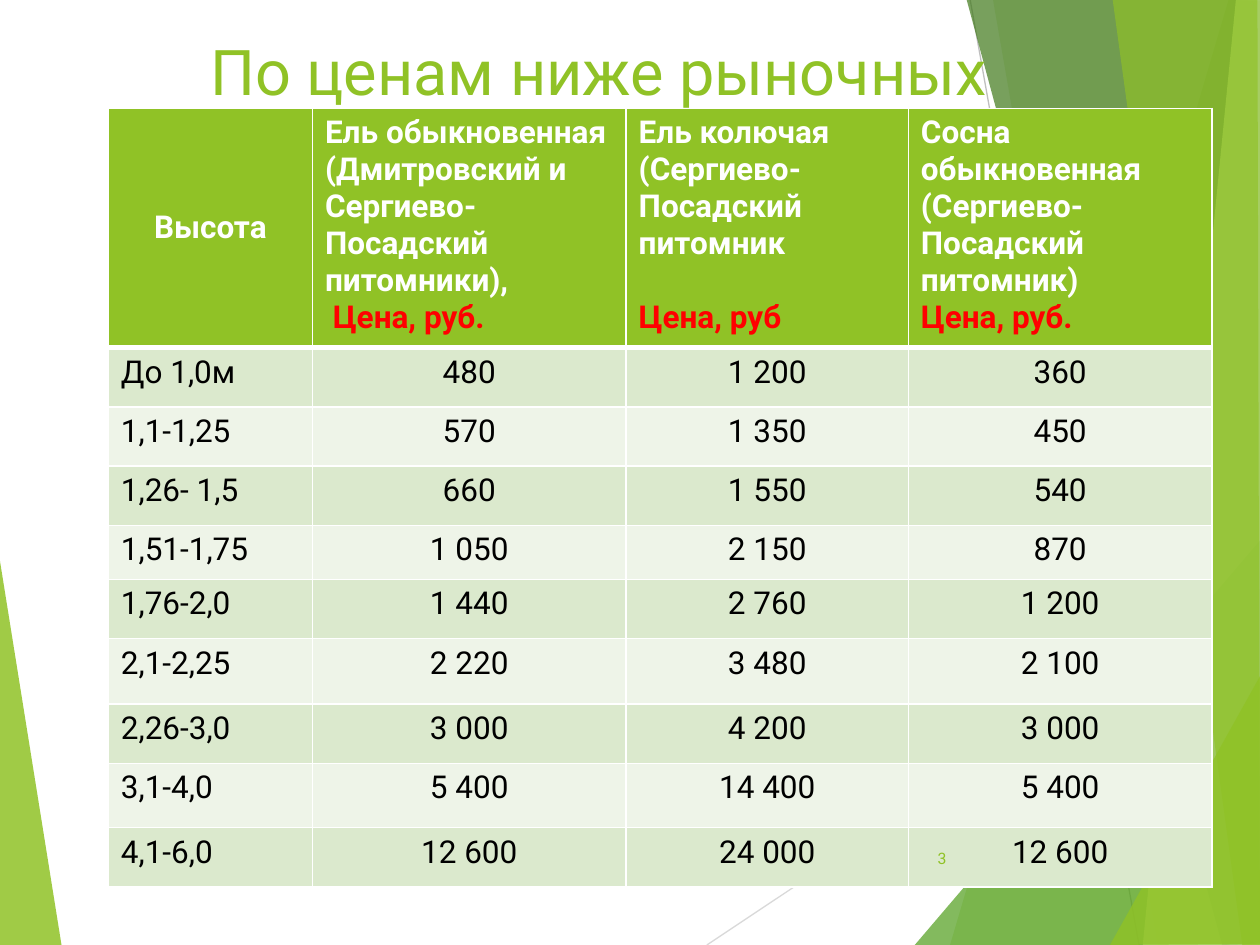
from dataclasses import dataclass

from lxml import etree
from pptx import Presentation
from pptx.dml.color import RGBColor
from pptx.enum.shapes import MSO_CONNECTOR
from pptx.enum.text import MSO_ANCHOR, PP_ALIGN
from pptx.oxml.ns import qn
from pptx.util import Inches, Pt

STRAIGHT = MSO_CONNECTOR.STRAIGHT
TOP, MIDDLE = MSO_ANCHOR.TOP, MSO_ANCHOR.MIDDLE
LEFT, CENTER, RIGHT = PP_ALIGN.LEFT, PP_ALIGN.CENTER, PP_ALIGN.RIGHT

COLUMNS, ROWS = 100, 75


@dataclass(frozen=True)
class Theme:
    font: str = "Roboto"
    green: str = "90C226"
    leaf: str = "54A021"
    forest: str = "3F7819"
    lime: str = "C0E474"
    white: str = "FFFFFF"
    black: str = "000000"
    red: str = "FF0000"
    pale_line: str = "D9D9D9"
    grey_line: str = "BFBFBF"
    bands: tuple = ("DBE9CD", "EEF4E8")
    title_size: float = 36
    table_size: float = 18
    number_size: float = 9


class SlideBuilder:
    def __init__(self, deck, theme):
        self.theme = theme
        self.page = deck.slides.add_slide(deck.slide_layouts[6])
        self.column = deck.slide_width / COLUMNS
        self.row = deck.slide_height / ROWS

    def across(self, columns):
        return round(columns * self.column)

    def down(self, rows):
        return round(rows * self.row)

    def place(self, left, top, width, height):
        return self.across(left), self.down(top), self.across(width), self.down(height)

    def style(self, paragraph, size, color, align=LEFT, bold=False):
        paragraph.alignment = align
        font = paragraph.font
        font.name, font.size, font.bold = self.theme.font, Pt(size), bold
        font.color.rgb = RGBColor.from_string(color)

    def facet(self, points, color, opacity):
        corners = [(self.across(x), self.down(y)) for x, y in points]
        builder = self.page.shapes.build_freeform(*corners[0])
        builder.add_line_segments(corners[1:], close=True)
        shape = builder.convert_to_shape()
        shape.shadow.inherit = False
        shape.fill.solid()
        shape.fill.fore_color.rgb = RGBColor.from_string(color)
        shape.line.fill.background()
        tint = shape.fill._xPr.find(".//" + qn("a:srgbClr"))
        etree.SubElement(tint, qn("a:alpha"), val=str(opacity * 1000))

    def line(self, start, end, color):
        (x1, y1), (x2, y2) = start, end
        connector = self.page.shapes.add_connector(
            STRAIGHT, self.across(x1), self.down(y1), self.across(x2), self.down(y2))
        connector.line.color.rgb = RGBColor.from_string(color)
        connector.line.width = Pt(0.75)
        etree.SubElement(connector._element.spPr, qn("a:effectLst"))

    def text(self, area, words, size, color, align=LEFT, anchor=TOP):
        frame = self.page.shapes.add_textbox(*self.place(*area)).text_frame
        frame.word_wrap = True
        frame.vertical_anchor = anchor
        paragraph = frame.paragraphs[0]
        paragraph.text = words
        self.style(paragraph, size, color, align)

    def table(self, area, widths, heights, headings, records):
        count = len(heights), len(widths)
        table = self.page.shapes.add_table(*count, *self.place(*area)).table
        for column, width in zip(table.columns, widths):
            column.width = self.across(width)
        for row, height in zip(table.rows, heights):
            row.height = self.down(height)
        for index, heading in enumerate(headings):
            self.heading(table.cell(0, index), *heading)
        for number, record in enumerate(records, 1):
            band = self.theme.bands[(number - 1) % 2]
            for index, value in enumerate(record):
                cell = table.cell(number, index)
                self.paint(cell, band, 3 if number == 1 else 1, 1)
                paragraph = cell.text_frame.paragraphs[0]
                paragraph.text = value
                self.style(paragraph, self.theme.table_size, self.theme.black,
                           CENTER if index else LEFT)

    def heading(self, cell, name, price="", gap=0):
        theme = self.theme
        self.paint(cell, theme.green, 1, 3)
        frame = cell.text_frame
        paragraph = frame.paragraphs[0]
        paragraph.text = name
        self.style(paragraph, theme.table_size, theme.white, LEFT if price else CENTER, True)
        if price:
            paragraph = frame.add_paragraph()
            paragraph.text = price
            paragraph.space_before = Pt(gap)
            self.style(paragraph, theme.table_size, theme.red, bold=True)
        else:
            cell.vertical_anchor = MIDDLE

    def paint(self, cell, color, top, bottom):
        properties = cell._tc.get_or_add_tcPr()
        for side, width in (("L", 1), ("R", 1), ("T", top), ("B", bottom)):
            border = etree.SubElement(properties, qn("a:ln" + side), w=str(Pt(width)))
            fill = etree.SubElement(border, qn("a:solidFill"))
            etree.SubElement(fill, qn("a:srgbClr"), val=self.theme.white)
        cell.fill.solid()
        cell.fill.fore_color.rgb = RGBColor.from_string(color)


def main():
    deck = Presentation()
    deck.slide_width, deck.slide_height = Inches(10), Inches(7.5)
    theme = Theme()
    slide = SlideBuilder(deck, theme)

    slide.facet([(-0.1, 43.9), (4.9, 75.1), (-0.1, 75)], theme.green, 85)
    slide.line((56.1, 75), (100.1, 45.7), theme.pale_line)
    slide.line((77, 0), (90.4, 75), theme.grey_line)
    facets = [
        ([(97.5, 0), (75.4, 75), (100.2, 75.1), (100.1, 0.1)], theme.green, 30),
        ([(78.8, -0.1), (91.9, 75), (100.1, 75), (100.1, -0.1)], theme.green, 20),
        ([(72.6, 75), (100, 42.9), (100.1, 75)], theme.leaf, 72),
        ([(76.7, -0.1), (97, 75), (100.1, 74.9), (100.1, -0.1)], theme.forest, 70),
        ([(98.1, -0.1), (90.7, 75), (100.1, 75), (100, -0.1)], theme.lime, 70),
        ([(88.3, -0.1), (98.6, 75), (100, 75), (99.8, -0.1)], theme.green, 65),
        ([(88.1, 75), (100.1, 53.5), (100.1, 74.9)], theme.green, 80),
    ]
    for points, color, opacity in facets:
        slide.facet(points, color, opacity)

    slide.text((15.7, 2.1, 69.4, 14.4), "По ценам ниже рыночных", theme.title_size, theme.green)

    headings = [
        ("Высота",),
        ("Ель обыкновенная (Дмитровский и Сергиево-Посадский питомники),", " Цена, руб."),
        ("Ель колючая (Сергиево-Посадский питомник", "Цена, руб", 21),
        ("Сосна обыкновенная (Сергиево-Посадский питомник)", "Цена, руб."),
    ]
    prices = [
        ("До 1,0м", "480", "1 200", "360"),
        ("1,1-1,25", "570", "1 350", "450"),
        ("1,26- 1,5", "660", "1 550", "540"),
        ("1,51-1,75", "1 050", "2 150", "870"),
        ("1,76-2,0", "1 440", "2 760", "1 200"),
        ("2,1-2,25", "2 220", "3 480", "2 100"),
        ("2,26-3,0", "3 000", "4 200", "3 000"),
        ("3,1-4,0", "5 400", "14 400", "5 400"),
        ("4,1-6,0", "12 600", "24 000", "12 600"),
    ]
    widths = [16.2, 24.9, 22.4, 24.1]
    heights = [16.8, 4.7, 4.7, 4.7, 4.3, 4.7, 5.2, 4.7, 5.1, 4.7]
    slide.table((8.6, 8.6, sum(widths), sum(heights)), widths, heights, headings, prices)

    slide.text((70.5, 66.1, 5.6, 4), "3", theme.number_size, theme.green, RIGHT, MIDDLE)
    deck.save("out.pptx")


if __name__ == "__main__":
    main()
